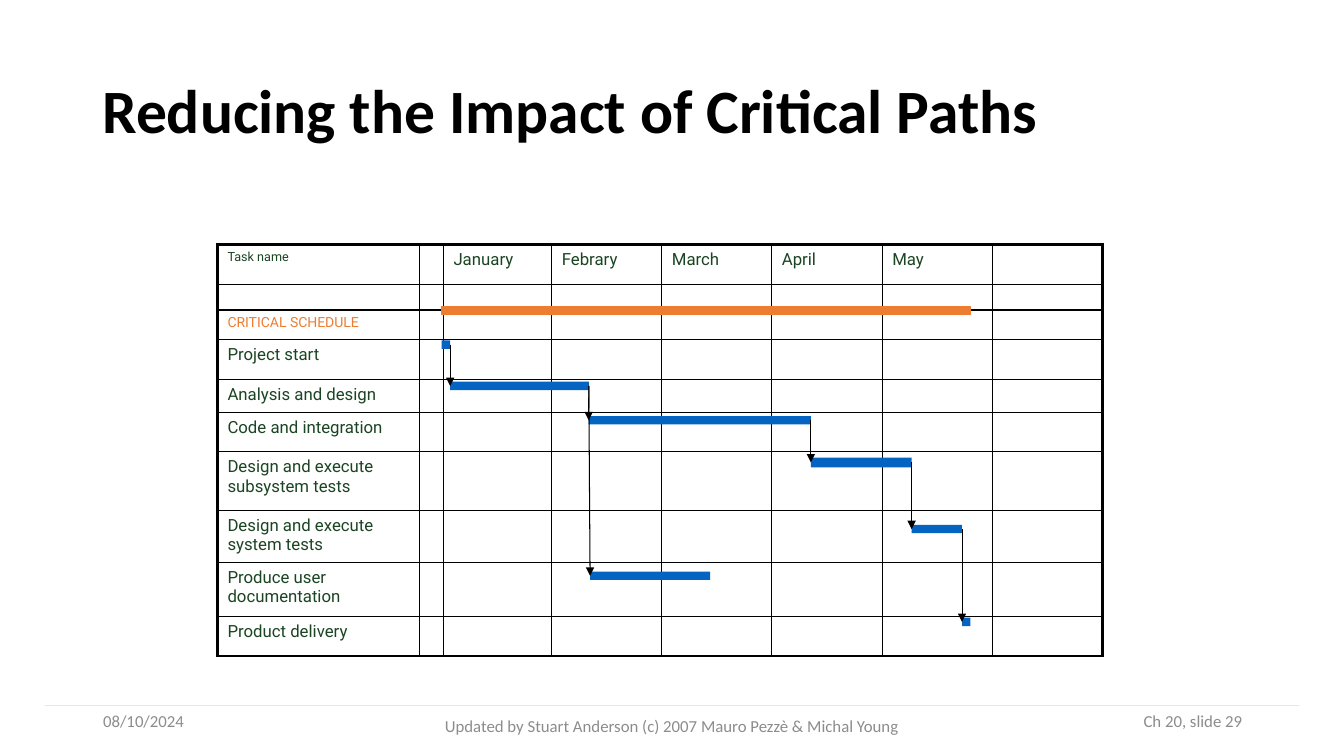
from itertools import accumulate

from lxml import etree
from pptx import Presentation
from pptx.dml.color import RGBColor
from pptx.enum.shapes import MSO_CONNECTOR, MSO_SHAPE
from pptx.enum.text import MSO_ANCHOR, PP_ALIGN
from pptx.oxml.ns import qn
from pptx.util import Pt

BLACK = RGBColor(0x00, 0x00, 0x00)
GREY = RGBColor(0x8C, 0x8C, 0x8C)
PALE = RGBColor(0xE7, 0xE6, 0xE6)
GREEN = RGBColor(0x1A, 0x44, 0x22)
ORANGE = RGBColor(0xED, 0x7D, 0x31)
BLUE = RGBColor(0x05, 0x63, 0xC1)
STRAIGHT = MSO_CONNECTOR.STRAIGHT
RECTANGLE = MSO_SHAPE.RECTANGLE
MIDDLE = MSO_ANCHOR.MIDDLE
LEFT, CENTER, RIGHT = PP_ALIGN.LEFT, PP_ALIGN.CENTER, PP_ALIGN.RIGHT

HEADINGS = ["Task name", "", "January", "Febrary", "March", "April", "May", ""]
TASKS = ["", "CRITICAL SCHEDULE", "Project start", "Analysis and design",
         "Code and integration", "Design and execute subsystem tests",
         "Design and execute system tests", "Produce user documentation",
         "Product delivery"]
COLUMN_WIDTHS = [144.2, 16.8, 77.4, 78.6, 78.6, 78.9, 78.9, 78.5]
ROW_HEIGHTS = [28.2, 18.4, 21.3, 28.3, 23.6, 28.1, 42.1, 37, 38.6, 28.2]

# Left, top, width and height of each bar, measured from the table corner
BARS = {
    "start": (160.1, 68.4, 6.2, 6),
    "analysis": (166.3, 97.9, 99, 6),
    "code": (265.2, 122.4, 158.7, 6),
    "subsystem": (423.9, 152, 72, 7),
    "system": (495.9, 200.1, 36, 6),
    "documentation": (266.2, 233.5, 85.7, 6),
    "delivery": (531.9, 266.4, 6, 6),
}
LINKS = [("start", "analysis"), ("analysis", "code"),
         ("analysis", "documentation"), ("code", "subsystem"),
         ("subsystem", "system"), ("system", "delivery")]
CRITICAL_BAR = (160.1, 44, 377.8, 6)


def write(para, text, **font):
    span = para.add_run()
    span.text = text
    color = font.pop("color")
    for name, value in font.items():
        setattr(span.font, name, value)
    span.font.color.rgb = color


def add_text(page, box, text, align=LEFT, line_spacing=1.0, **font):
    frame = page.shapes.add_textbox(*map(Pt, box)).text_frame
    frame.word_wrap = True
    frame.vertical_anchor = MIDDLE
    para = frame.paragraphs[0]
    para.alignment = align
    para.line_spacing = line_spacing
    write(para, text, name="Calibri", **font)


def add_line(shapes, start, end, color, arrow=False):
    line = shapes.add_connector(STRAIGHT, *map(Pt, (*start, *end)))
    line.line.color.rgb = color
    line.line.width = Pt(0.75)
    if arrow:
        etree.SubElement(line.line._get_or_add_ln(), qn("a:tailEnd"), type="triangle")
    etree.SubElement(line._element.spPr, qn("a:effectLst"))


def add_footer(page, left, top, width):
    add_line(page.shapes, (left, top), (left + width, top), PALE)
    parts = [(34.5, -3.6, 142, "08/10/2024", LEFT),
             (268, 0, 360,
              "Updated by Stuart Anderson (c) 2007 Mauro Pezzè & Michal Young", CENTER),
             (709, -3.6, 153.5, "Ch 20, slide 29", RIGHT)]
    for across, down, part_width, text, align in parts:
        add_text(page, (left + across, top + down, part_width, 28.8), text, align,
                 size=Pt(12), color=GREY)


def set_borders(cell, widths):
    properties = cell._tc.get_or_add_tcPr()
    for position, (side, width) in enumerate(widths.items()):
        border = etree.Element(qn(f"a:ln{side}"), w=str(Pt(width)))
        fill = etree.SubElement(border, qn("a:solidFill"))
        etree.SubElement(fill, qn("a:srgbClr"), val=str(BLACK))
        properties.insert(position, border)


def fill_cell(cell, text, size, color):
    cell.fill.background()
    para = cell.text_frame.paragraphs[0]
    if text:
        para.space_before = Pt(0.2 * size)
        write(para, text, name="Roboto", size=Pt(size), color=color)
    else:
        # An empty cell needs a small end mark, or its row grows
        etree.SubElement(para._p, qn("a:endParaRPr"), sz="800")


def add_schedule_table(page, left, top):
    row_count, column_count = len(ROW_HEIGHTS), len(COLUMN_WIDTHS)
    *_, width = accumulate(COLUMN_WIDTHS)
    *_, height = accumulate(ROW_HEIGHTS)
    frame = page.shapes.add_table(row_count, column_count,
                                  *map(Pt, (left, top, width, height)))
    table = frame.table
    table.first_row = table.horz_banding = False
    for column, column_width in zip(table.columns, COLUMN_WIDTHS):
        column.width = Pt(column_width)
    for row, row_height in zip(table.rows, ROW_HEIGHTS):
        row.height = Pt(row_height)

    rows = [HEADINGS] + [[task] + [""] * (column_count - 1) for task in TASKS]
    styles = {"Task name": (9, GREEN), "CRITICAL SCHEDULE": (10, ORANGE)}
    for r, texts in enumerate(rows):
        for c, text in enumerate(texts):
            cell = table.cell(r, c)
            fill_cell(cell, text, *styles.get(text, (12, GREEN)))
            outer = {"L": c == 0, "R": c == column_count - 1,
                     "T": r == 0, "B": r == row_count - 1}
            set_borders(cell, {side: 2.25 if edge else 1
                               for side, edge in outer.items()})


def add_bar(shapes, left, top, bar, color):
    across, down, width, height = bar
    shape = shapes.add_shape(RECTANGLE, *map(Pt, (left + across, top + down, width, height)))
    shape.shadow.inherit = False
    shape.fill.solid()
    shape.fill.fore_color.rgb = color
    shape.line.fill.background()
    return shape


def add_schedule_bars(page, left, top):
    """Draw the task bars, and an arrow from the end of each to the start of the next."""
    shapes = page.shapes.add_group_shape().shapes
    for bar in BARS.values():
        add_bar(shapes, left, top, bar, BLUE)
    for before, after in LINKS:
        x, y, width, height = BARS[before]
        next_x, next_y, _, next_height = BARS[after]
        add_line(shapes, (left + x + width, top + y + height / 2),
                 (left + next_x, top + next_y + next_height / 2), BLACK, arrow=True)
    critical = add_bar(shapes, left, top, CRITICAL_BAR, ORANGE)
    critical.line.color.rgb = ORANGE
    critical.line.width = Pt(0.75)


def main():
    deck = Presentation()
    deck.slide_width, deck.slide_height = Pt(960), Pt(540)
    page = deck.slides.add_slide(deck.slide_layouts[6])
    add_footer(page, 32, 504, 896)
    add_text(page, (66, 28.75, 828, 104.4), "Reducing the Impact of Critical Paths",
             line_spacing=0.9, size=Pt(44), bold=True, color=BLACK)
    chart_corner = (155.3, 174.8)
    add_schedule_table(page, *chart_corner)
    add_schedule_bars(page, *chart_corner)
    deck.save("out.pptx")


if __name__ == "__main__":
    main()
